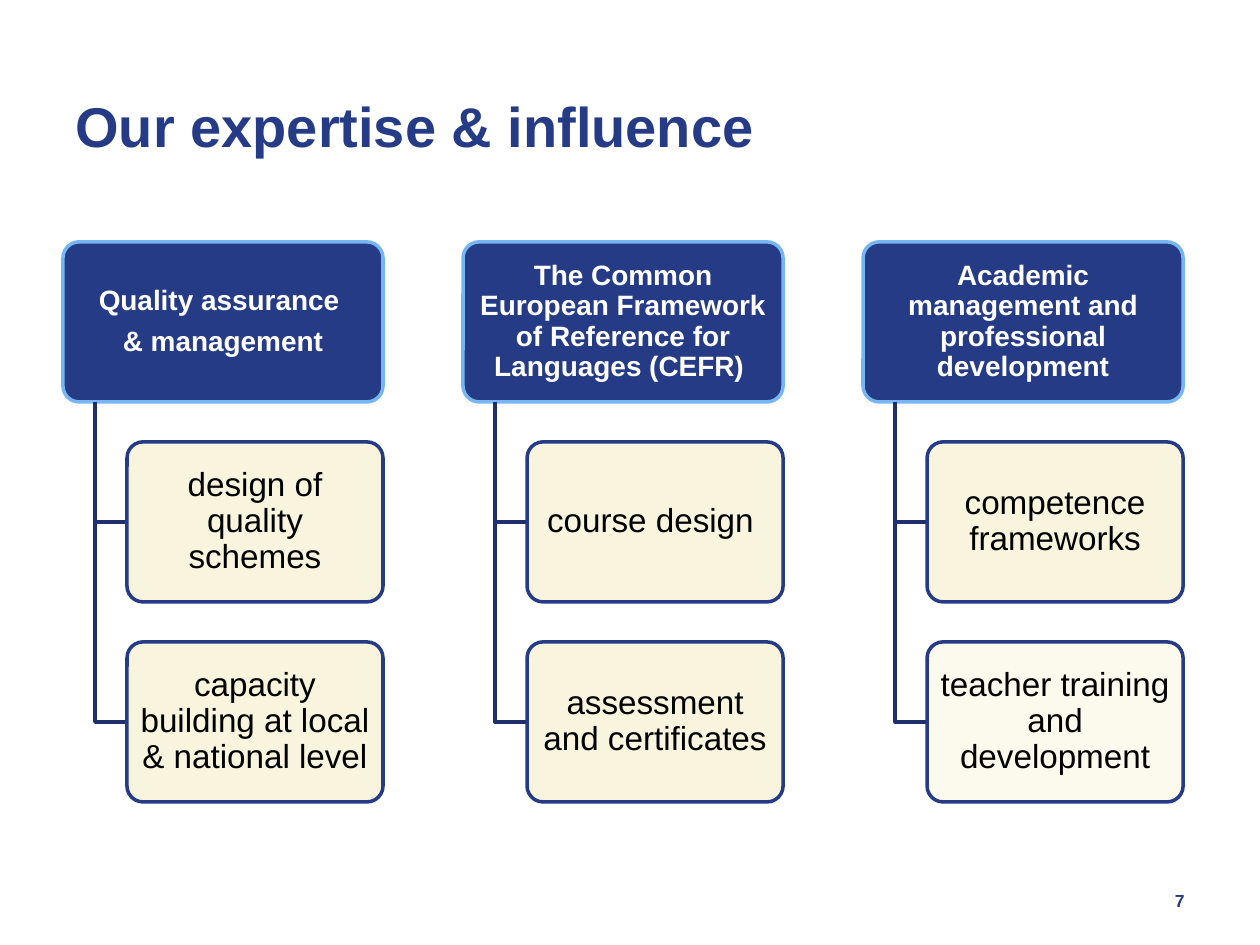
from lxml.etree import SubElement
from pptx import Presentation
from pptx.dml.color import RGBColor
from pptx.enum.shapes import MSO_SHAPE as Preset
from pptx.enum.text import MSO_ANCHOR as Anchor, PP_ALIGN as Align
from pptx.oxml.ns import qn
from pptx.util import Inches, Pt

TITLE = "Our expertise & influence"
PAGE_NUMBER = "7"
BRANCHES = [
    (["Quality assurance ", "& management"],
     ["design of quality schemes", "capacity building at local & national level"]),
    (["The Common European Framework of Reference for Languages (CEFR) "],
     ["course design ", "assessment and certificates"]),
    (["Academic management and professional development"],
     ["competence frameworks", "teacher training and development"]),
]
HIGHLIGHTED = "teacher training and development"

THEME = {
    "font": "Arial", "navy": "263B86", "sky": "76B6F2", "branch": "1E2F6B",
    "cream": "F9F3DA", "ivory": "FCF9EC", "white": "FFFFFF", "black": "000000",
    "title": 32, "heading": 16, "item": 19, "number": 10, "line": 2,
}

LEFT, TOP = 0.5, 1.92
HEAD_WIDTH, BOX_HEIGHT = 2.54, 1.27
COLUMN_STEP, ROW_STEP = HEAD_WIDTH * 1.25, BOX_HEIGHT * 1.25
TRUNK_INDENT, ITEM_INDENT = HEAD_WIDTH * 0.1, HEAD_WIDTH * 0.2


def color(name):
    return RGBColor.from_string(THEME[name])


def write_text(shape, paragraphs, *, size, ink, bold=False, align=Align.LEFT,
               anchor=Anchor.MIDDLE, insets=(0.1, 0.05), spacing=0.9, after=0):
    frame = shape.text_frame
    frame.word_wrap = True
    frame.vertical_anchor = anchor
    frame.margin_left = frame.margin_right = Inches(insets[0])
    frame.margin_top = frame.margin_bottom = Inches(insets[1])
    for index, text in enumerate(paragraphs):
        paragraph = frame.paragraphs[0] if index == 0 else frame.add_paragraph()
        paragraph.alignment = align
        paragraph.line_spacing = spacing
        paragraph.space_after = Pt(after)
        run = paragraph.add_run()
        run.text = text
        run.font.name = THEME["font"]
        run.font.size = Pt(THEME[size])
        run.font.bold = bold
        run.font.color.rgb = color(ink)


def add_text(slide, text, box, **formatting):
    shape = slide.shapes.add_textbox(*map(Inches, box))
    write_text(shape, [text], **formatting)


def set_line(shape, name):
    shape.shadow.inherit = False
    shape.line.color.rgb = color(name)
    shape.line.width = Pt(THEME["line"])


def add_box(slide, paragraphs, box, *, fill, line, opacity=100, **formatting):
    shape = slide.shapes.add_shape(Preset.ROUNDED_RECTANGLE, *map(Inches, box))
    shape.adjustments[0] = 0.1
    shape.fill.solid()
    shape.fill.fore_color.rgb = color(fill)
    if opacity < 100:
        tint = shape.fill._xPr.find(qn("a:solidFill"))[0]
        SubElement(tint, qn("a:alpha"), val=str(opacity * 1000))
    set_line(shape, line)
    write_text(shape, paragraphs, align=Align.CENTER, **formatting)


def add_elbow(slide, x, top, bottom, right):
    builder = slide.shapes.build_freeform(Inches(x), Inches(top))
    corners = [(Inches(x), Inches(bottom)), (Inches(right), Inches(bottom))]
    builder.add_line_segments(corners, close=False)
    shape = builder.convert_to_shape()
    shape.fill.background()
    set_line(shape, "branch")


def add_branch(slide, left, heading, items):
    add_box(slide, heading, (left, TOP, HEAD_WIDTH, BOX_HEIGHT), fill="navy", line="sky",
            size="heading", ink="white", bold=True, insets=(0.03, 0.02), after=6.4)
    item_left = left + ITEM_INDENT
    for row, item in enumerate(items, start=1):
        top = TOP + row * ROW_STEP
        add_elbow(slide, left + TRUNK_INDENT, TOP + BOX_HEIGHT, top + BOX_HEIGHT / 2, item_left)
        add_box(slide, [item], (item_left, top, HEAD_WIDTH - ITEM_INDENT, BOX_HEIGHT),
                fill="ivory" if item == HIGHLIGHTED else "cream", line="navy", opacity=90,
                size="item", ink="black", insets=(0.04, 0.03))


def main():
    presentation = Presentation()
    presentation.slide_width, presentation.slide_height = Inches(10), Inches(7.5)
    slide = presentation.slides.add_slide(presentation.slide_layouts[6])
    add_text(slide, PAGE_NUMBER, (7.17, 6.95, 2.33, 0.4), size="number", ink="navy",
             bold=True, align=Align.RIGHT, spacing=1.0)
    add_text(slide, TITLE, (LEFT, 0.55, 7.73, 0.77), size="title", ink="navy",
             bold=True, anchor=Anchor.BOTTOM)
    for column, (heading, items) in enumerate(BRANCHES):
        add_branch(slide, LEFT + column * COLUMN_STEP, heading, items)
    presentation.save("out.pptx")


if __name__ == "__main__":
    main()
